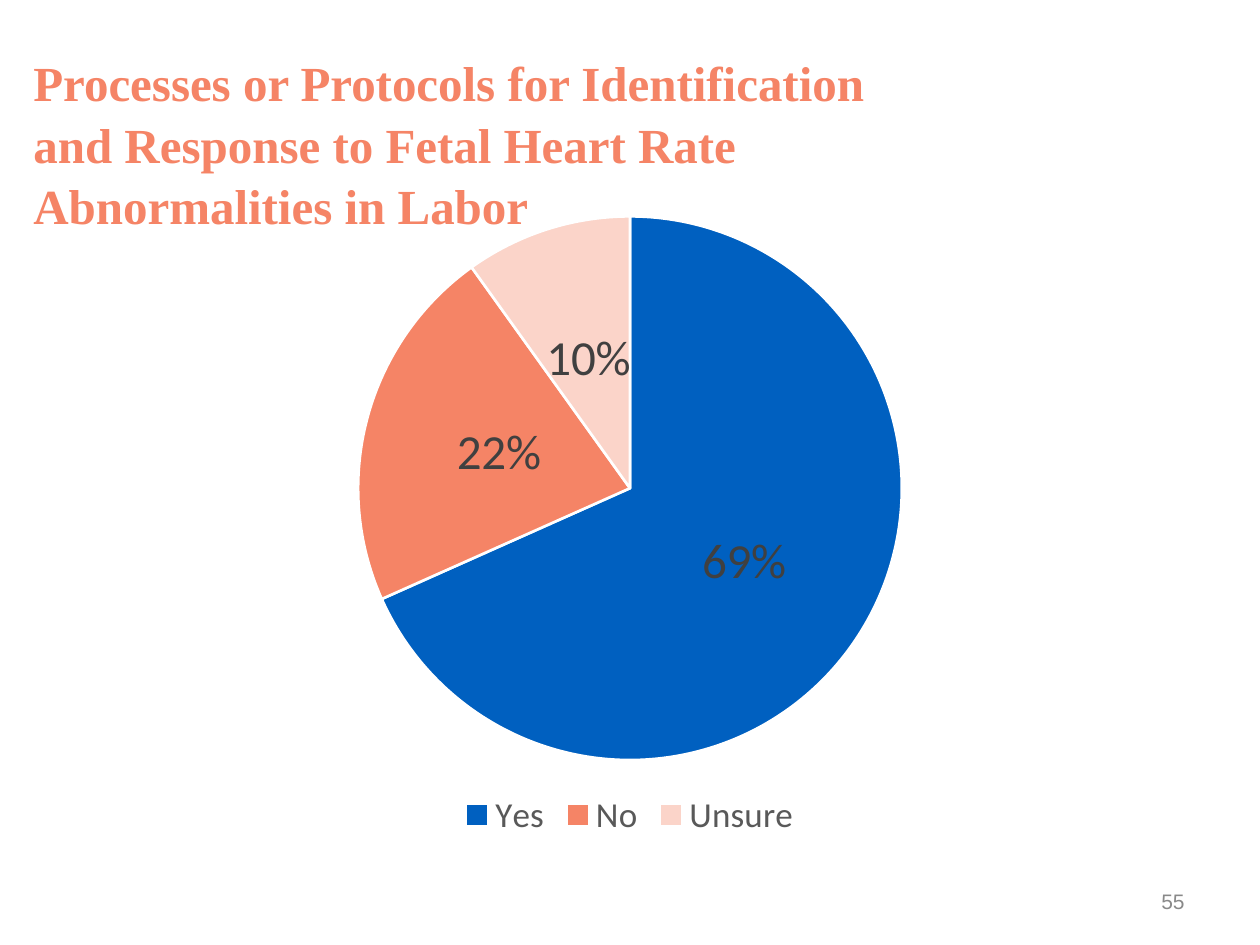
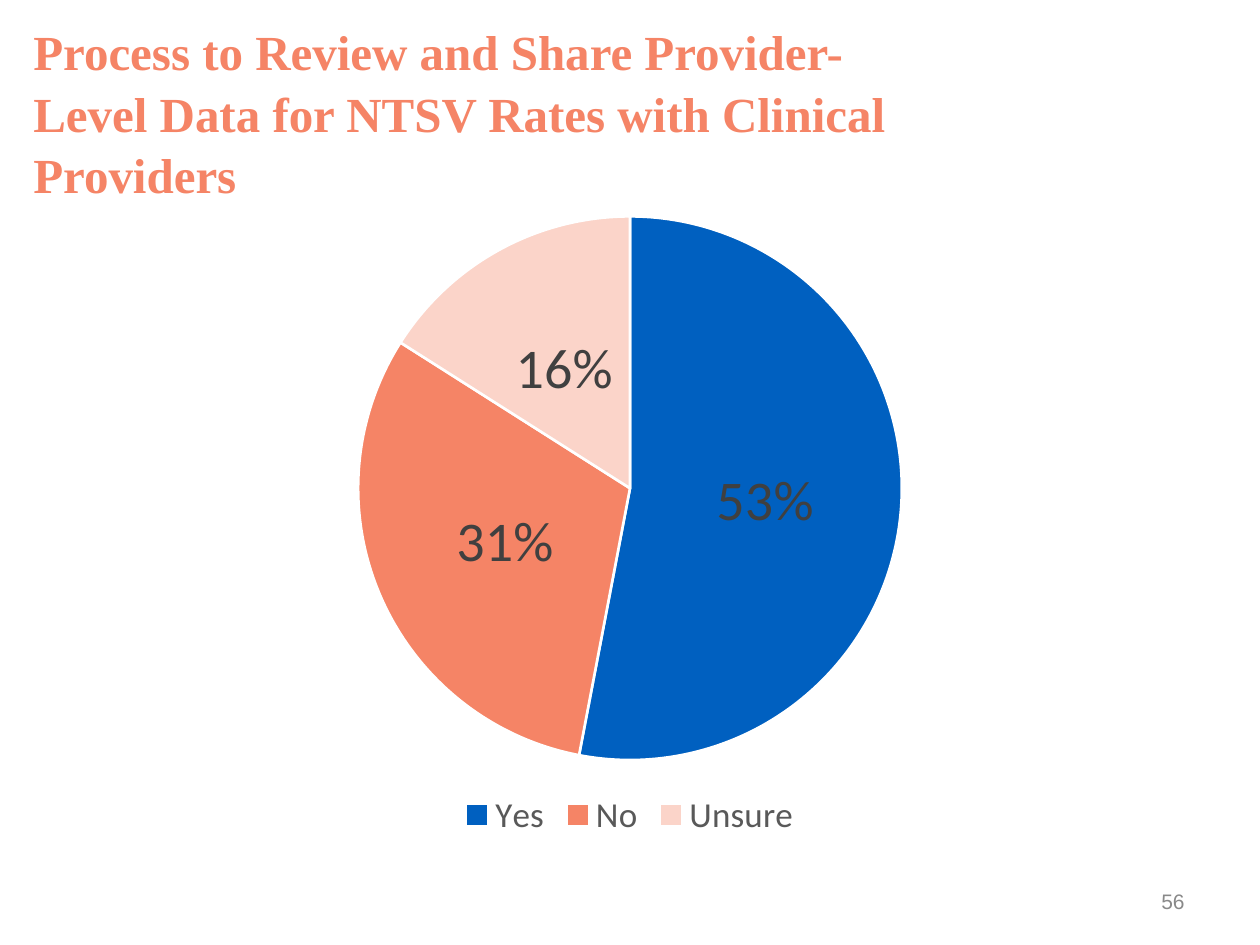
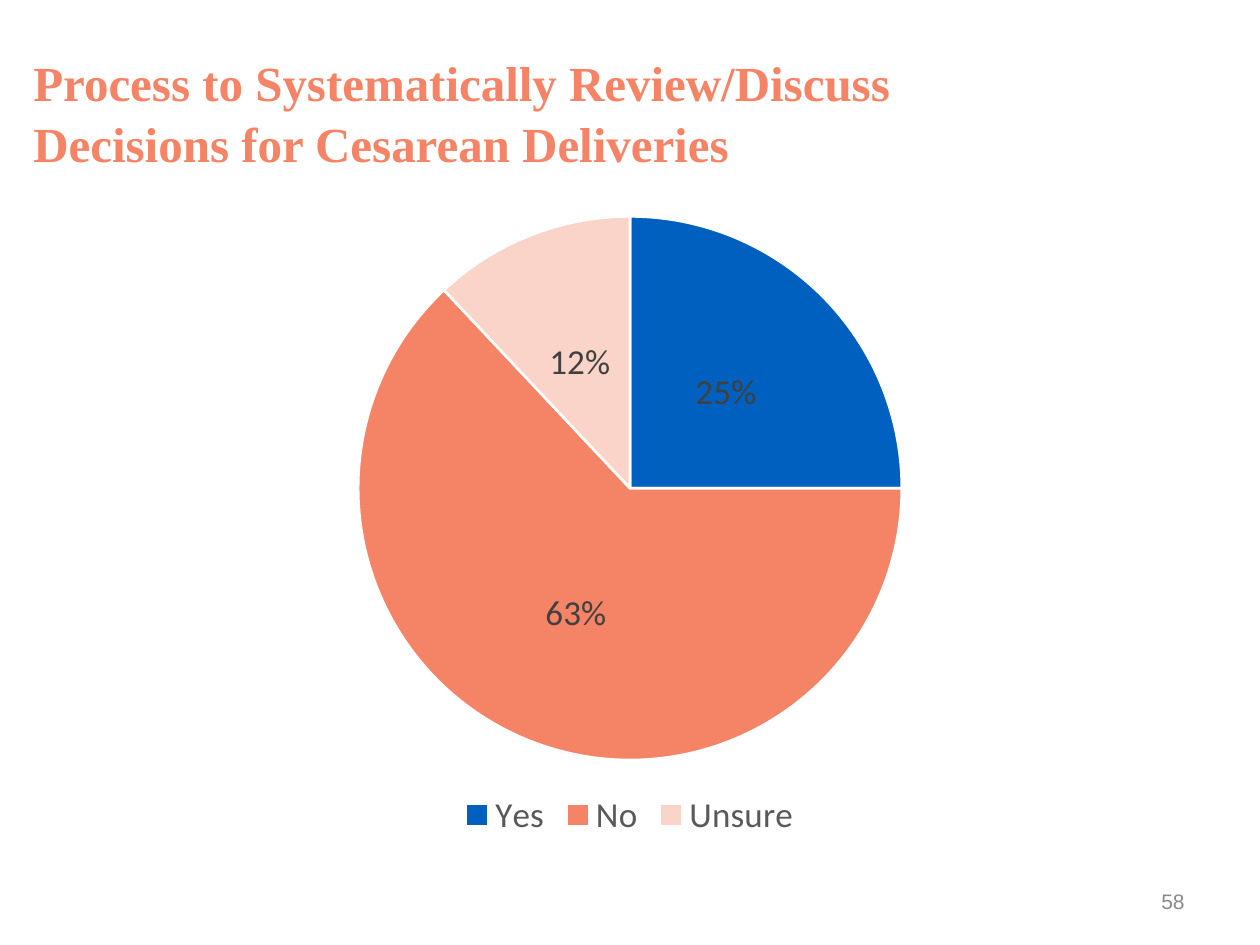
from pptx import Presentation
from pptx import util as u
from pptx.chart.data import CategoryChartData
from pptx.dml.color import RGBColor
from pptx.enum import chart as ch, text

# Content: title, title top, page number, label size, shares in percent
ANSWERS = ["Yes", "No", "Unsure"]
SLIDES = [
    ("Processes or Protocols for Identification and Response to "
     "Fetal Heart Rate Abnormalities in Labor", 63, 55, 28, (69, 22, 10)),
    ("Process to Review and Share Provider-Level Data for "
     "NTSV Rates with Clinical Providers", 32, 56, 32, (53, 31, 16)),
    ("Process to Systematically Review/Discuss Decisions for "
     "Cesarean Deliveries", 32, 58, 20, (25, 63, 12)),
]

# Shared look
COLORS = {"yes": "0060C0", "no": "F58466", "unsure": "FBD4C9", "title": "F58466",
          "label": "404040", "legend": "595959", "number": "898989", "edge": "FFFFFF"}
PX = u.Inches(1) / 126


def px(*lengths):
    return [round(n * PX) for n in lengths]


def rgb(name):
    return RGBColor.from_string(COLORS[name])


def style(font, name, size, color, bold=False):
    font.name, font.size, font.bold = name, u.Pt(size), bold
    font.color.rgb = rgb(color)


def add_text(slide, box, words, name, size, color, bold=False,
             align=text.PP_ALIGN.LEFT, spacing=1.0):
    tf = slide.shapes.add_textbox(*px(*box)).text_frame
    tf.word_wrap = True
    tf.vertical_anchor = text.MSO_ANCHOR.MIDDLE
    tf.text = words
    p = tf.paragraphs[0]
    p.alignment, p.line_spacing = align, spacing
    style(p.runs[0].font, name, size, color, bold)


def add_pie(slide, shares, label_size):
    data = CategoryChartData()
    data.categories = ANSWERS
    data.add_series("Series 1", shares)
    chart = slide.shapes.add_chart(
        ch.XL_CHART_TYPE.PIE, *px(63, 199, 1134, 645), data).chart
    chart.has_title = False
    chart.font.name, chart.font.size = "Calibri", u.Pt(10)

    # Legend
    chart.has_legend = True
    chart.legend.position = ch.XL_LEGEND_POSITION.BOTTOM
    chart.legend.include_in_layout = False
    style(chart.legend.font, "Calibri", 20, "legend")

    # Slices
    plot = chart.plots[0]
    plot.vary_by_categories = True
    for i, answer in enumerate(ANSWERS):
        fmt = plot.series[0].points[i].format
        fmt.fill.solid()
        fmt.fill.fore_color.rgb = rgb(answer.lower())
        fmt.line.color.rgb = rgb("edge")
        fmt.line.width = u.Pt(1.5)

    # Rounded shares can add up to 101, so labels show the values themselves
    labels = plot.series[0].data_labels
    labels.show_value = True
    labels.number_format = '0"%"'
    labels.number_format_is_linked = False
    labels.position = ch.XL_LABEL_POSITION.CENTER
    style(labels.font, "Calibri", label_size, "label")


def main():
    prs = Presentation()
    prs.slide_width, prs.slide_height = u.Inches(10), u.Inches(7.5)
    for title, top, number, label_size, shares in SLIDES:
        s = prs.slides.add_slide(prs.slide_layouts[6])
        add_text(s, (21, top, 903, 158), title, "Times New Roman", 28, "title",
                 bold=True, spacing=1.05)
        add_pie(s, shares, label_size)
        add_text(s, (903, 876, 294, 50), str(number), "Arial", 12, "number",
                 align=text.PP_ALIGN.RIGHT)
    prs.save("out.pptx")


if __name__ == "__main__":
    main()
